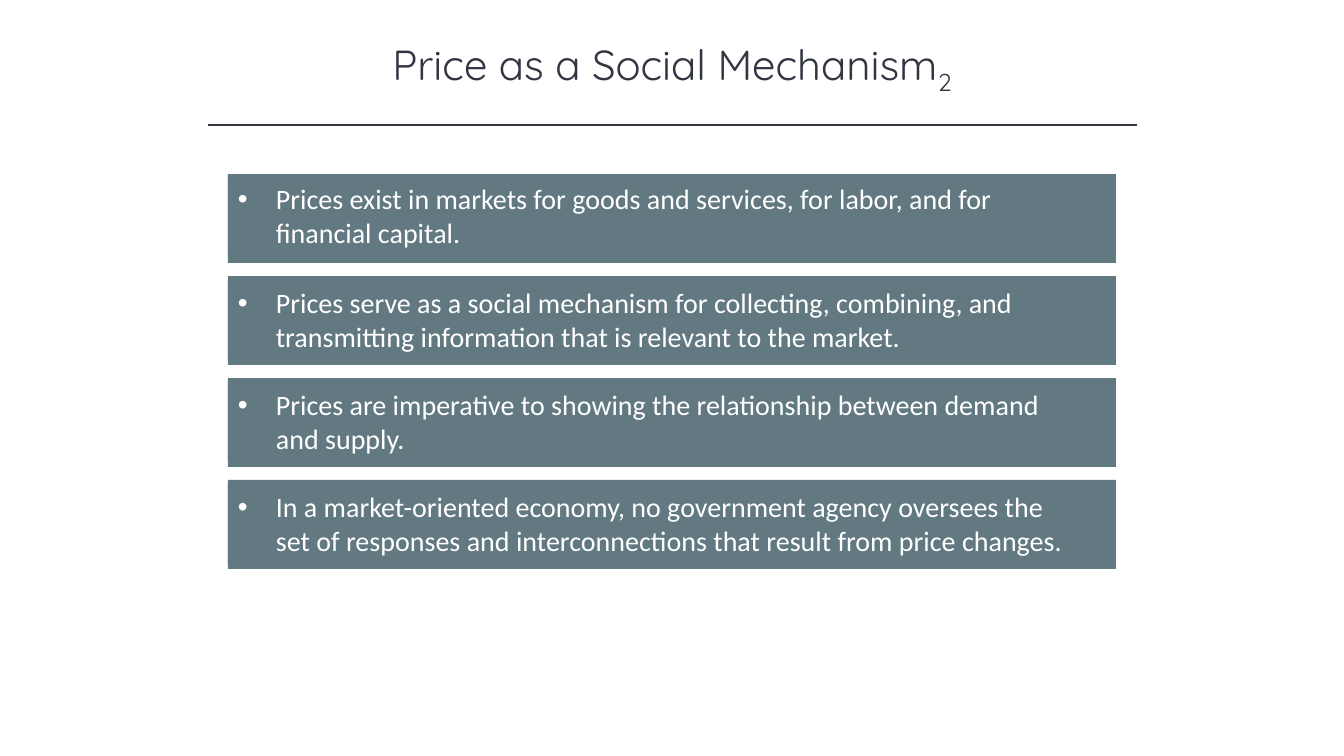
from dataclasses import dataclass

from lxml.etree import SubElement
from pptx import Presentation
from pptx.dml.color import RGBColor
from pptx.enum.shapes import MSO_CONNECTOR, MSO_SHAPE
from pptx.enum.text import MSO_ANCHOR, MSO_AUTO_SIZE, PP_ALIGN
from pptx.oxml.ns import qn
from pptx.util import Emu, Pt

# Content: title runs as (text, baseline shift), then (text, inset from bar top)
TITLE = [("Price as a Social Mechanism", None), ("2", "-25000")]
POINTS = [
    ("Prices exist in markets for goods and services, for labor, and for "
     "financial capital.", 3),
    ("Prices serve as a social mechanism for collecting, combining, and "
     "transmitting information that is relevant to the market.", 5),
    ("Prices are imperative to showing the relationship between demand and "
     "supply.", 5),
    ("In a market-oriented economy, no government agency oversees the set of "
     "responses and interconnections that result from price changes.", 5),
]


@dataclass(frozen=True)
class Theme:
    ink: RGBColor = RGBColor(0x32, 0x35, 0x42)
    bar: RGBColor = RGBColor(0x62, 0x79, 0x81)
    white: RGBColor = RGBColor(0xFF, 0xFF, 0xFF)
    title_font: str = "Quicksand"
    body_font: str = "Calibri"
    title_size: int = 30
    body_size: int = 20


THEME = Theme()

# Layout in px
SLIDE_W, SLIDE_H = 1344, 756
TITLE_BOX = (168, 37, 1008, 61)
RULE_X1, RULE_X2, RULE_Y = 208, 1137, 125
BAR_X, BAR_Y, BAR_W, BAR_H, BAR_GAP = 228, 174, 888, 89, 13
TEXT_W, TEXT_H, HANG = 861, 78, 38


def px(n):
    return Emu(round(n * 914400 / 100.8))


def add_run(p, text, font, size, color):
    r = p.add_run()
    r.text = text
    r.font.name, r.font.size = font, Pt(size)
    r.font.color.rgb = color
    return r


def add_title(s):
    sp = s.shapes.title
    sp.left, sp.top, sp.width, sp.height = map(px, TITLE_BOX)
    tf = sp.text_frame
    tf.word_wrap = True
    tf.auto_size = MSO_AUTO_SIZE.SHAPE_TO_FIT_TEXT
    tf.vertical_anchor = MSO_ANCHOR.MIDDLE
    p = tf.paragraphs[0]
    p.alignment = PP_ALIGN.CENTER
    for text, baseline in TITLE:
        r = add_run(p, text, THEME.title_font, THEME.title_size, THEME.ink)
        if baseline:
            r.font._element.set("baseline", baseline)


def add_rule(s):
    line = s.shapes.add_connector(MSO_CONNECTOR.STRAIGHT, px(RULE_X1),
                                  px(RULE_Y), px(RULE_X2), px(RULE_Y))
    line.line.color.rgb = THEME.ink
    line.line.width = Pt(1)
    SubElement(line._element.spPr, qn("a:effectLst"))


def add_bar(s, y, text, inset):
    group = s.shapes.add_group_shape()
    bar = group.shapes.add_shape(MSO_SHAPE.RECTANGLE, px(BAR_X), px(y),
                                 px(BAR_W), px(BAR_H))
    bar.shadow.inherit = False
    bar.line.fill.background()
    box = group.shapes.add_textbox(px(BAR_X), px(y + inset),
                                   px(TEXT_W), px(TEXT_H))
    for sp in (bar, box):
        sp.fill.solid()
        sp.fill.fore_color.rgb = THEME.bar
    tf = box.text_frame
    tf.word_wrap = True
    tf.auto_size = MSO_AUTO_SIZE.SHAPE_TO_FIT_TEXT
    p = tf.paragraphs[0]
    # Hanging bullet
    pPr = p._p.get_or_add_pPr()
    pPr.set("marL", str(px(HANG)))
    pPr.set("indent", str(-px(HANG)))
    SubElement(pPr, qn("a:buFont"), typeface="Arial")
    SubElement(pPr, qn("a:buChar"), char="•")
    add_run(p, text, THEME.body_font, THEME.body_size, THEME.white)


def main():
    prs = Presentation()
    prs.slide_width, prs.slide_height = px(SLIDE_W), px(SLIDE_H)
    s = prs.slides.add_slide(prs.slide_layouts[5])
    add_title(s)
    add_rule(s)
    for i, (text, inset) in enumerate(POINTS):
        add_bar(s, BAR_Y + i * (BAR_H + BAR_GAP), text, inset)
    prs.save("out.pptx")


if __name__ == "__main__":
    main()
